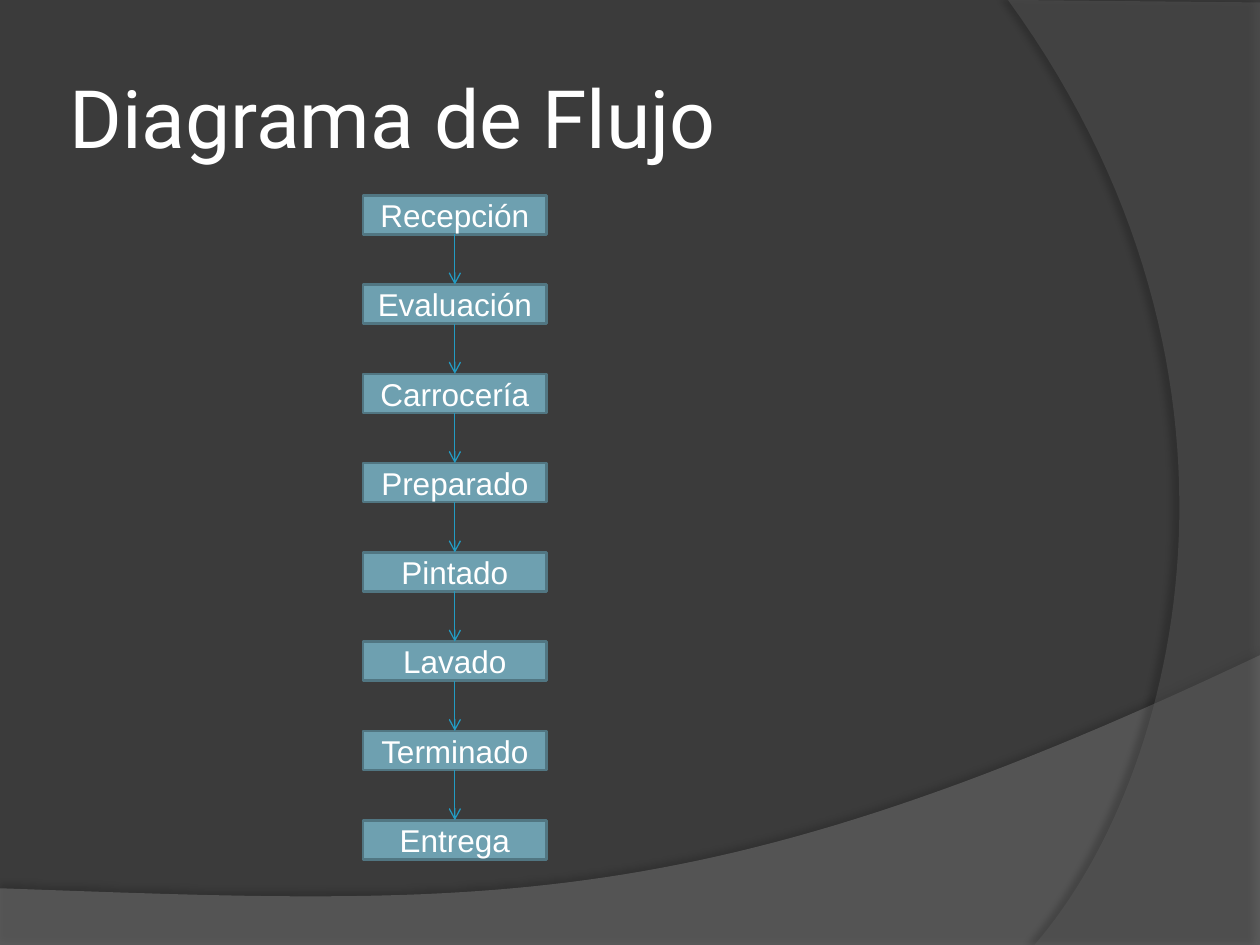
from pptx import Presentation
from pptx.dml.color import RGBColor
from pptx.enum.shapes import MSO_CONNECTOR as CONN, MSO_SHAPE as SHAPE
from pptx.enum.text import MSO_ANCHOR as ANCHOR, MSO_AUTO_SIZE as AUTO, PP_ALIGN as ALIGN
from pptx.oxml import parse_xml
from pptx.oxml.ns import nsdecls, qn
from pptx.util import Inches, Pt

BACKGROUND = RGBColor(0x3B, 0x3B, 0x3B)
LOWER_WAVE = RGBColor(0x7F, 0x7F, 0x7F)
RIGHT_WAVE = RGBColor(0x5E, 0x5E, 0x5E)
BOX_FILL = RGBColor(0x6E, 0xA0, 0xB0)
BOX_LINE = RGBColor(0x51, 0x76, 0x82)
ARROW = RGBColor(0x23, 0x9B, 0xC2)
WHITE = RGBColor(0xFF, 0xFF, 0xFF)

STEPS = ["Recepción", "Evaluación", "Carrocería", "Preparado",
         "Pintado", "Lavado", "Terminado", "Entrega"]


def add_xml(parent, xml):
    """Append a drawing element, given as '<a:name ...', to parent."""
    head, rest = xml.split(" ", 1)
    parent.append(parse_xml(f"{head} {nsdecls('a')} {rest}"))


def bezier(p0, p1, p2, p3, steps=60):
    """Points along a cubic curve, after its start."""
    for i in range(1, steps + 1):
        t = i / steps
        u = 1 - t
        yield tuple(u**3 * a + 3 * u * u * t * b + 3 * u * t * t * c + t**3 * d
                    for a, b, c, d in zip(p0, p1, p2, p3))


def format_text(tf, text, align, fmt):
    tf.vertical_anchor = ANCHOR.MIDDLE
    tf.word_wrap = True
    p = tf.paragraphs[0]
    p.alignment = align
    r = p.add_run()
    r.text = text
    r.font.color.rgb = WHITE
    for name, value in fmt.items():
        setattr(r.font, name, value)


def add_wave(slide, corners, curve, color, opacity, shadow):
    """Translucent area: straight corners, then a curve from the last one."""
    points = [(Inches(x), Inches(y))
              for x, y in [*corners, *bezier(corners[-1], *curve)]]
    builder = slide.shapes.build_freeform(*points[0])
    builder.add_line_segments(points[1:], close=True)
    sp = builder.convert_to_shape()
    sp.fill.solid()
    sp.fill.fore_color.rgb = color
    sp.line.fill.background()
    sp.shadow.inherit = False
    sp_pr = sp.element.spPr
    add_xml(sp_pr.find(qn("a:solidFill"))[0], f'<a:alpha val="{opacity * 1000}"/>')
    strength, distance, angle = shadow
    add_xml(sp_pr.find(qn("a:effectLst")),
            f'<a:outerShdw blurRad="{Pt(4)}" dist="{Pt(distance)}" '
            f'dir="{angle * 60000}" algn="ctr" rotWithShape="0">'
            f'<a:srgbClr val="000000"><a:alpha val="{strength * 1000}"/>'
            '</a:srgbClr></a:outerShdw>')


def add_backdrop(slide):
    slide.background.fill.solid()
    slide.background.fill.fore_color.rgb = BACKGROUND
    add_wave(slide, [(0, 7.05), (0, 7.51), (10, 7.51), (10, 5.2)],
             [(5.59, 7.29), (3.91, 7.19), (0, 7.05)],
             LOWER_WAVE, 45, (35, 3.5, 270))
    add_wave(slide, [(10, 0.02), (10, 7.5), (8.21, 7.5)],
             [(9.35, 6.19), (10.18, 3), (8, 0)],
             RIGHT_WAVE, 40, (45, 4, 180))


def add_title(slide, left, top, width, height):
    title = slide.shapes.title
    place = {"left": left, "top": top, "width": width, "height": height}
    for name, value in place.items():
        setattr(title, name, Inches(value))
    tf = title.text_frame
    tf.auto_size = AUTO.NONE
    for side in ("left", "top", "right", "bottom"):
        setattr(tf, f"margin_{side}", Inches(0.05))
    format_text(tf, "Diagrama de Flujo", ALIGN.LEFT,
                {"size": Pt(46), "name": "Roboto"})
    # Bring the title in front of the backdrop
    title.element.getparent().append(title.element)


def add_step(slide, text, left, top, width, height):
    sp = slide.shapes.add_shape(SHAPE.RECTANGLE, Inches(left), Inches(top),
                                Inches(width), Inches(height))
    sp.shadow.inherit = False
    sp.fill.solid()
    sp.fill.fore_color.rgb = BOX_FILL
    sp.line.color.rgb = BOX_LINE
    sp.line.width = Pt(1.5)
    format_text(sp.text_frame, text, ALIGN.CENTER,
                {"size": Pt(18), "name": "Arial"})
    return sp


def add_arrow(slide, upper, lower):
    arrow = slide.shapes.add_connector(CONN.STRAIGHT, 0, 0, 0, 0)
    arrow.begin_connect(upper, 2)
    arrow.end_connect(lower, 0)
    arrow.line.color.rgb = ARROW
    arrow.line.width = Pt(0.75)
    sp_pr = arrow.element.spPr
    add_xml(sp_pr.find(qn("a:ln")), '<a:tailEnd type="arrow"/>')
    add_xml(sp_pr, "<a:effectLst />")


def add_flow(slide, left, top, width, height, box_height=0.31):
    """Equal boxes spread over the height, joined by arrows."""
    pitch = (height - box_height) / (len(STEPS) - 1)
    boxes = [add_step(slide, text, left, top + i * pitch, width, box_height)
             for i, text in enumerate(STEPS)]
    for upper, lower in zip(boxes, boxes[1:]):
        add_arrow(slide, upper, lower)


def main():
    prs = Presentation()
    prs.slide_width, prs.slide_height = Inches(10), Inches(7.5)
    slide = prs.slides.add_slide(prs.slide_layouts[5])  # title only
    add_backdrop(slide)
    add_title(slide, 0.5, 0.3, 8.17, 1.25)
    add_flow(slide, 2.88, 1.55, 1.46, 5.27)
    prs.save("out.pptx")


if __name__ == "__main__":
    main()
